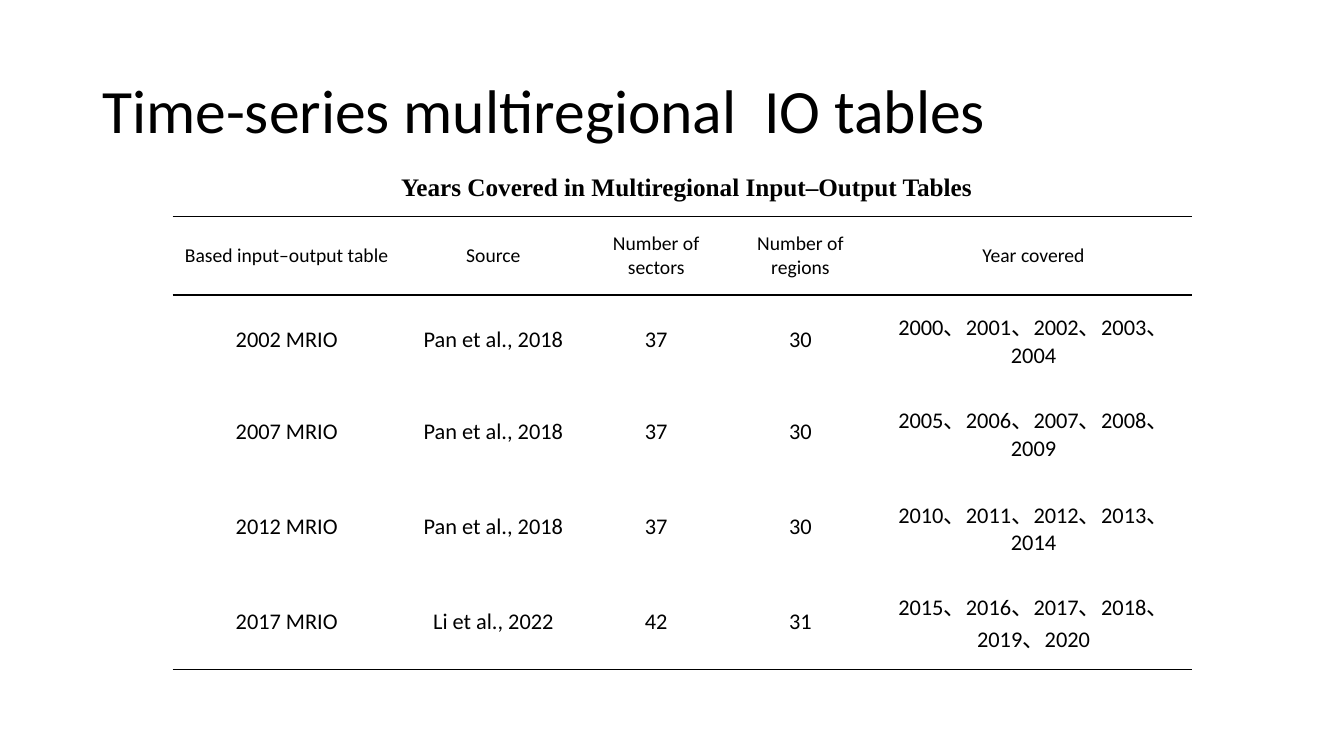
from lxml import etree
from pptx import Presentation
from pptx.dml.color import RGBColor
from pptx.enum.text import MSO_ANCHOR, PP_ALIGN
from pptx.oxml.ns import qn
from pptx.util import Pt

MIDDLE = MSO_ANCHOR.MIDDLE
CENTER = PP_ALIGN.CENTER
LEFT = PP_ALIGN.LEFT
BLACK = "000000"


def write_text(text_frame, text, size, font="Calibri", color=BLACK, bold=False,
               align=LEFT, space_before=0, line_spacing=1.0):
    text_frame.word_wrap = True
    paragraph = text_frame.paragraphs[0]
    paragraph.alignment = align
    paragraph.space_before = Pt(space_before)
    paragraph.line_spacing = line_spacing
    run = paragraph.add_run()
    run.text = text
    run.font.size = Pt(size)
    run.font.name = font
    run.font.bold = bold
    run.font.color.rgb = RGBColor.from_string(color)


def set_borders(cell, ruled_sides):
    """Rule the named sides (T, B) with a 1 pt line and clear the others."""
    properties = cell._tc.get_or_add_tcPr()
    for position, side in enumerate("LRTB"):
        line = etree.Element(qn(f"a:ln{side}"), w=str(Pt(1)))
        properties.insert(position, line)
        if side in ruled_sides:
            fill = etree.SubElement(line, qn("a:solidFill"))
            etree.SubElement(fill, qn("a:srgbClr"), val=BLACK)
        else:
            etree.SubElement(line, qn("a:noFill"))


presentation = Presentation()
presentation.slide_width = Pt(960)
presentation.slide_height = Pt(540)
slide = presentation.slides.add_slide(presentation.slide_layouts[6])

# Title
title = slide.shapes.add_textbox(Pt(66), Pt(28.75), Pt(828), Pt(104.4))
title.text_frame.vertical_anchor = MIDDLE
write_text(title.text_frame, "Time-series multiregional  IO tables", 44, line_spacing=0.9)

# Table of covered years
rows = [
    ("Based input–output table", "Source", "Number of sectors", "Number of regions",
     "Year covered"),
    ("2002 MRIO", "Pan et al., 2018", "37", "30", "2000、2001、2002、2003、2004"),
    ("2007 MRIO", "Pan et al., 2018", "37", "30", "2005、2006、2007、2008、2009"),
    ("2012 MRIO", "Pan et al., 2018", "37", "30", "2010、2011、2012、2013、2014"),
    ("2017 MRIO", "Li et al., 2022", "42", "31", "2015、2016、2017、2018、2019、2020"),
]
column_widths = [162.8, 132.5, 100.1, 106, 227]
row_heights = [56.3, 64.2, 67.7, 67.7, 67.7]
ruled_sides = ["TB", "T", "", "", "B"]

table = slide.shapes.add_table(len(rows), len(column_widths), Pt(123.4), Pt(154.4),
                               Pt(sum(column_widths)), Pt(sum(row_heights))).table
table.first_row = False
table.horz_banding = False
for column, width in zip(table.columns, column_widths):
    column.width = Pt(width)

for row_index, values in enumerate(rows):
    table.rows[row_index].height = Pt(row_heights[row_index])
    is_header = row_index == 0
    for column_index, value in enumerate(values):
        cell = table.cell(row_index, column_index)
        cell.fill.background()
        cell.vertical_anchor = MIDDLE
        cell.margin_left = cell.margin_right = Pt(5)
        cell.margin_top = cell.margin_bottom = 0
        write_text(cell.text_frame, value, 14 if is_header else 16, align=CENTER,
                   space_before=0 if is_header else 2.5)
        set_borders(cell, ruled_sides[row_index])

# Table caption
caption = slide.shapes.add_textbox(Pt(279.4), Pt(118.8), Pt(453.6), Pt(29))
write_text(caption.text_frame, "Years Covered in Multiregional Input–Output Tables", 18,
           font="Times New Roman", bold=True)

presentation.save("out.pptx")
